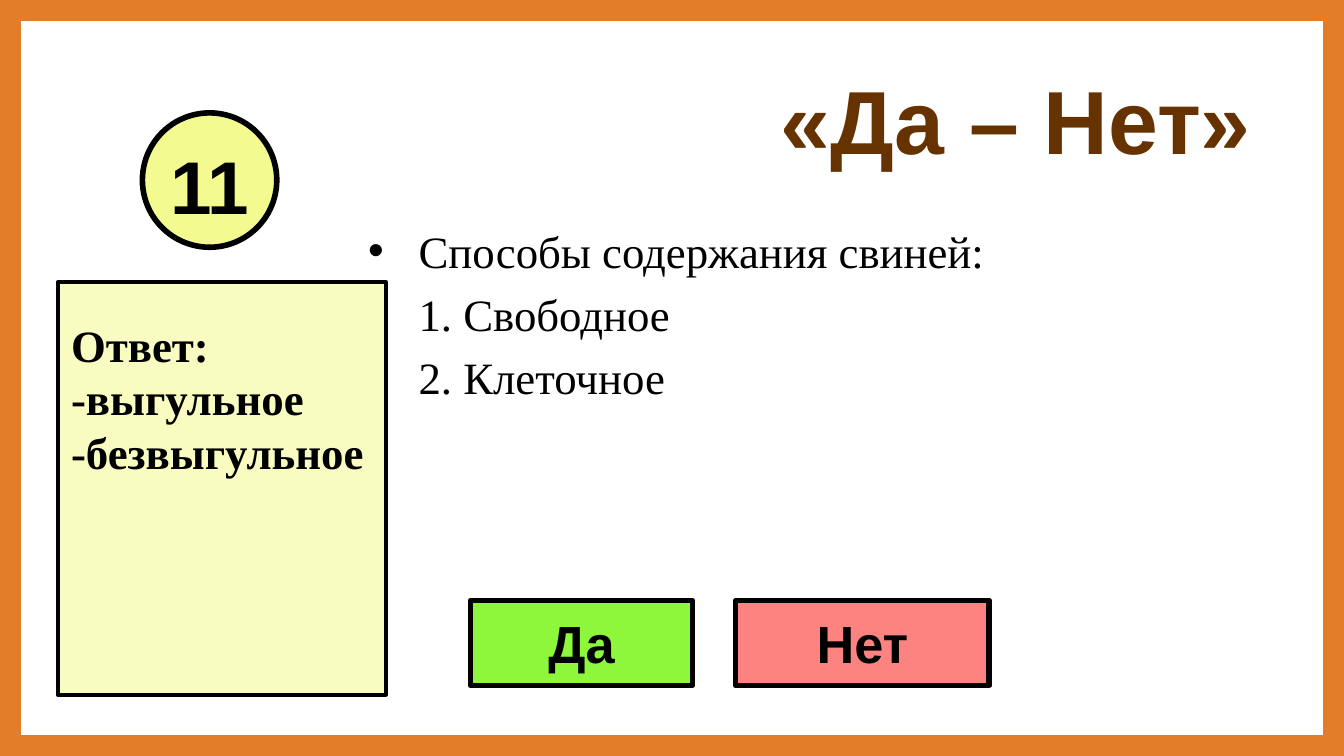
from dataclasses import dataclass

from lxml.etree import SubElement
from pptx import Presentation
from pptx.dml.color import RGBColor as Color
from pptx.enum.shapes import MSO_SHAPE as Shape
from pptx.enum.text import MSO_ANCHOR as Anchor, MSO_AUTO_SIZE as AutoSize, PP_ALIGN as Align
from pptx.oxml.ns import qn
from pptx.util import Pt


@dataclass(frozen=True)
class Theme:
    """Colours, fonts and type sizes of the quiz."""
    border: str = "E37D29"
    heading: str = "663300"
    ink: str = "000000"
    paper: str = "FFFFFF"
    badge: str = "F2FA90"
    yes: str = "8CF73B"
    no: str = "FC8380"
    answer: str = "F8FCC0"
    sans: str = "Arial"
    serif: str = "Times New Roman"
    title_size: int = 48
    number_size: int = 40
    button_size: int = 28
    text_size: int = 24


THEME = Theme()


def apply(target, values):
    """Set each attribute of the target from a dict."""
    for name, value in values.items():
        setattr(target, name, value)


def place(shape, box):
    """Move a shape into a box of left, top, width and height in points."""
    apply(shape, dict(zip(("left", "top", "width", "height"), map(Pt, box))))


def write(shape, lines, font, size, color=THEME.ink, bold=True, frame=None, paragraph=None):
    """Fill a shape with formatted paragraphs and return them."""
    text_frame = shape.text_frame
    text_frame.text = "\n".join(lines)
    apply(text_frame, {"auto_size": AutoSize.NONE, "vertical_anchor": Anchor.MIDDLE,
                       "word_wrap": True, **(frame or {})})
    for item in text_frame.paragraphs:
        apply(item, paragraph or {"alignment": Align.CENTER})
        apply(item.font, {"name": font, "size": Pt(size), "bold": bold})
        item.font.color.rgb = Color.from_string(color)
    return text_frame.paragraphs


def add_panel(slide, kind, box, fill, line=THEME.ink, weight=3):
    """Add a filled and outlined preset shape."""
    shape = slide.shapes.add_shape(kind, *map(Pt, box))
    shape.shadow.inherit = False
    shape.fill.solid()
    shape.fill.fore_color.rgb = Color.from_string(fill)
    shape.line.color.rgb = Color.from_string(line)
    shape.line.width = Pt(weight)
    return shape


def add_border(slide, box):
    """Frame the whole slide."""
    border = add_panel(slide, Shape.FRAME, box, THEME.border, THEME.border, 2)
    border.adjustments[0] = 0.025


def add_title(slide, box, text):
    """Place the heading in the title placeholder."""
    place(slide.shapes.title, box)
    write(slide.shapes.title, [text], THEME.sans, THEME.title_size, THEME.heading,
          frame={"margin_top": Pt(10)})


def add_question(slide, box, lines):
    """Place a bulleted question and its options in the body placeholder."""
    body = slide.placeholders[1]
    place(body, box)
    paragraphs = write(body, lines, THEME.serif, THEME.text_size, bold=False,
                       frame={"vertical_anchor": Anchor.TOP, "margin_top": Pt(8)},
                       paragraph={"alignment": Align.LEFT, "space_before": Pt(5)})
    paragraphs[0].space_before = Pt(0)
    for index, paragraph in enumerate(paragraphs):
        properties = paragraph._p.get_or_add_pPr()
        properties.set("marL", str(Pt(27)))
        properties.set("indent", str(0 if index else -Pt(27)))
        bullet = SubElement(properties, qn("a:buNone" if index else "a:buChar"))
        if not index:
            bullet.set("char", "•")
        properties.remove(bullet)
        defaults = properties.find(qn("a:defRPr"))
        if defaults is None:
            properties.append(bullet)
        else:
            defaults.addprevious(bullet)


def add_badge(slide, box, number):
    """Add the round question number."""
    badge = add_panel(slide, Shape.OVAL, box, THEME.badge)
    write(badge, [number], THEME.sans, THEME.number_size,
          frame={"word_wrap": False, "margin_top": Pt(8)})


def add_buttons(slide, box, gap, buttons):
    """Lay out buttons of given widths from left to right."""
    left, top, _, height = box
    for label, width, fill in buttons:
        button = add_panel(slide, Shape.RECTANGLE, (left, top, width, height), fill)
        write(button, [label], THEME.sans, THEME.button_size, frame={"word_wrap": False})
        left += width + gap


def add_answer(slide, box, lines):
    """Add the answer card."""
    card = add_panel(slide, Shape.RECTANGLE, box, THEME.answer, weight=2.25)
    write(card, lines, THEME.serif, THEME.text_size,
          frame={"vertical_anchor": Anchor.TOP, "margin_top": Pt(19), "word_wrap": False},
          paragraph={"alignment": Align.LEFT, "line_spacing": Pt(28.7)})


def main():
    """Build and save the quiz slide."""
    presentation = Presentation()
    apply(presentation, {"slide_width": Pt(720), "slide_height": Pt(405)})
    slide = presentation.slides.add_slide(presentation.slide_layouts[1])
    slide.background.fill.solid()
    slide.background.fill.fore_color.rgb = Color.from_string(THEME.paper)
    add_border(slide, (0, 0, 720, 405))
    add_title(slide, (388, 26.6, 312.5, 67.7), "«Да – Нет»")
    add_question(slide, (190, 111.6, 494, 267),
                 ["Способы содержания свиней:", "1. Свободное", "2. Клеточное"])
    add_badge(slide, (76.3, 60.5, 72, 72), "11")
    add_buttons(slide, (252, 321.8, 278, 45.4), 23,
                [("Да", 119, THEME.yes), ("Нет", 136, THEME.no)])
    add_answer(slide, (31, 151.2, 175.7, 221),
               ["Ответ:", "-выгульное", "-безвыгульное"])
    presentation.save("out.pptx")


if __name__ == "__main__":
    main()
